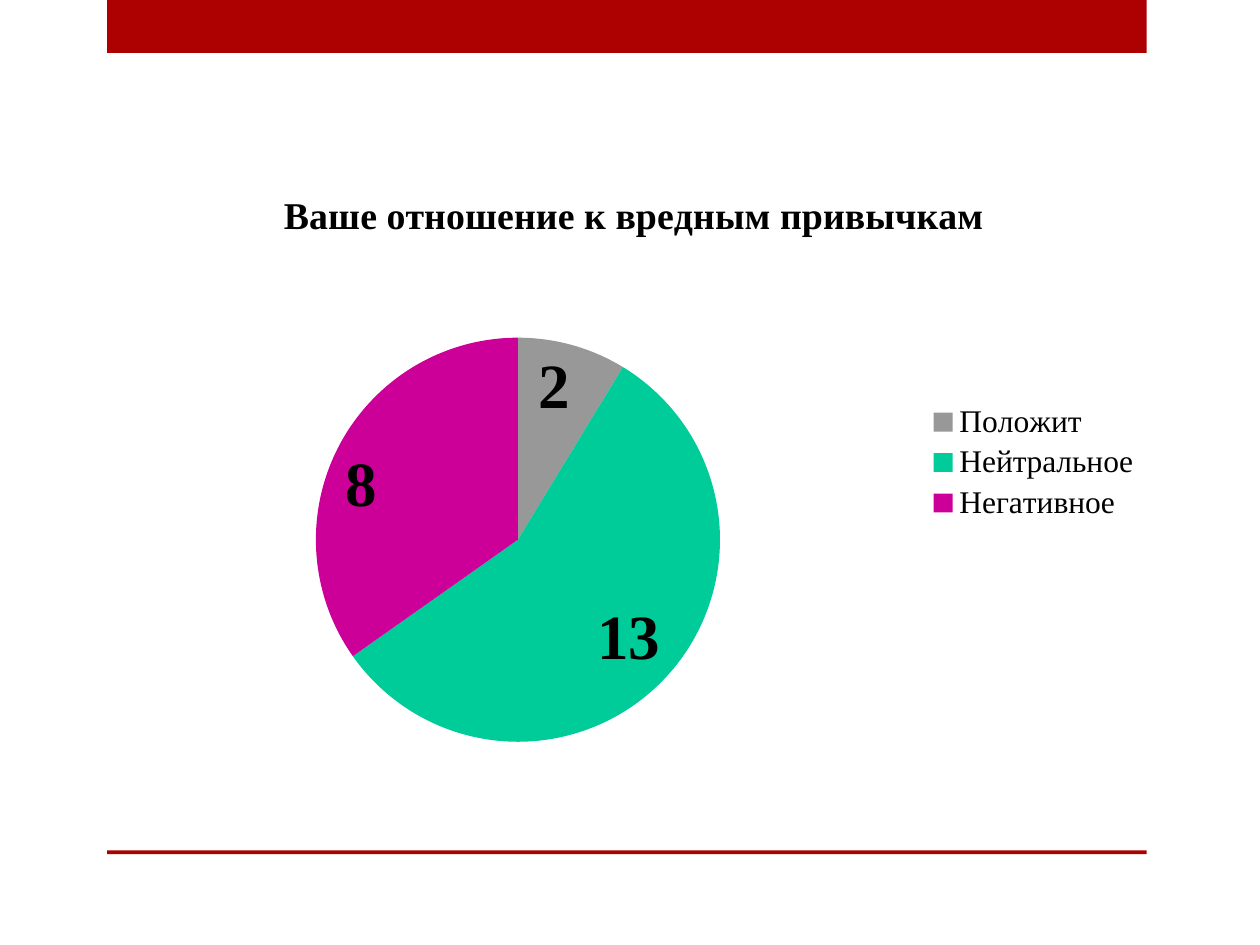
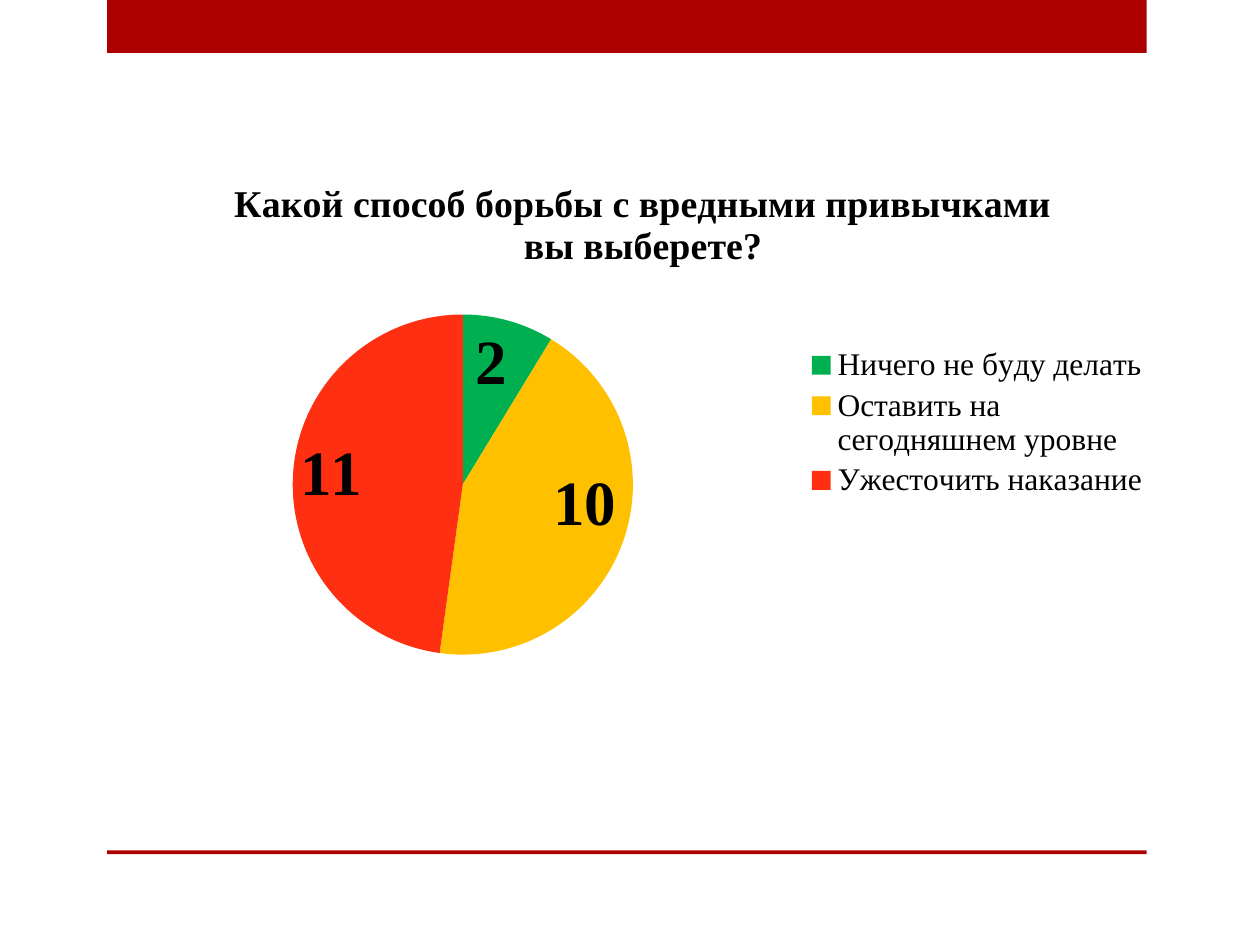
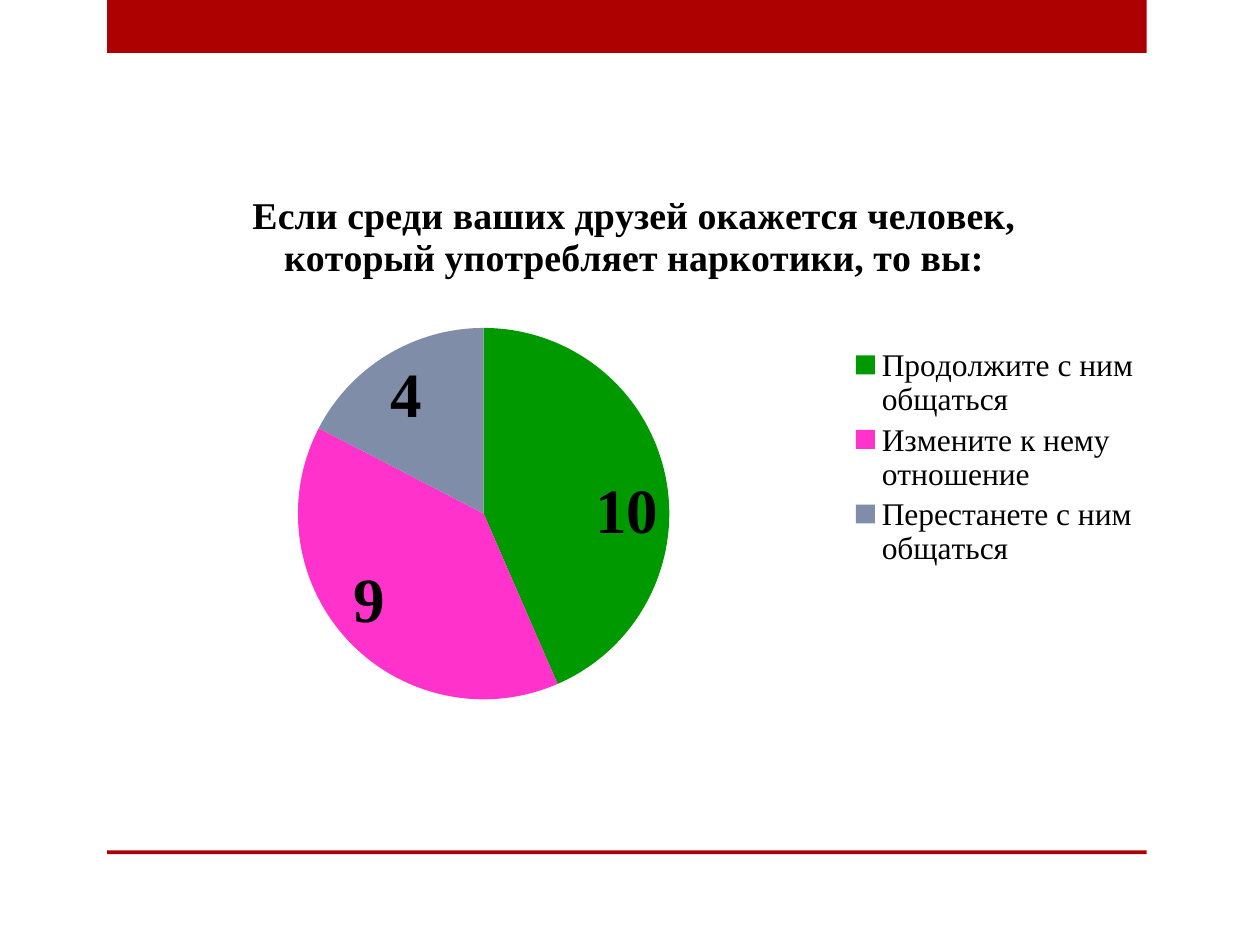
from dataclasses import dataclass

from lxml import etree
from pptx import Presentation
from pptx.chart.data import CategoryChartData
from pptx.dml.color import RGBColor
from pptx.enum.chart import XL_CHART_TYPE, XL_LABEL_POSITION, XL_LEGEND_POSITION
from pptx.enum.shapes import MSO_SHAPE
from pptx.oxml.ns import qn
from pptx.util import Inches, Pt

PIE = XL_CHART_TYPE.PIE
INSIDE_END = XL_LABEL_POSITION.INSIDE_END
LEGEND_RIGHT = XL_LEGEND_POSITION.RIGHT
RECTANGLE = MSO_SHAPE.RECTANGLE

SLIDE_W, SLIDE_H = Inches(10), Inches(7.5)
BLANK_LAYOUT = 6


@dataclass(frozen=True)
class Theme:
    font: str = "Times New Roman"
    band: str = "AD0101"
    text: str = "000000"
    legend_size: float = 18
    title_size: float = 21.6
    value_size: float = 36


THEME = Theme()

# Bands and charts are boxes in shares of the slide: left, top, width, height
BANDS = [(0.085, 0, 0.825, 0.056), (0.085, 0.9, 0.825, 0.004)]


@dataclass(frozen=True)
class Question:
    title: str
    answers: list  # (answer, votes, colour)
    box: tuple
    plot: tuple  # shares of the chart


QUESTIONS = [
    Question(
        "Ваше отношение к вредным привычкам",
        [("Положит", 2, "989898"),
         ("Нейтральное", 13, "00CC99"),
         ("Негативное", 8, "CC0099")],
        box=(0.091, 0.175, 0.825, 0.629),
        plot=(0.05, 0.29, 0.676, 0.68),
    ),
    Question(
        "Какой способ борьбы с вредными привычками вы выберете?",
        [("Ничего не буду делать", 2, "00B050"),
         ("Оставить на сегодняшнем уровне", 10, "FFC000"),
         ("Ужесточить наказание", 11, "FF2F12")],
        box=(0.098, 0.164, 0.825, 0.567),
        plot=(0.056, 0.298, 0.541, 0.635),
    ),
    Question(
        "Если среди ваших друзей окажется человек, "
        "который употребляет наркотики, то вы:",
        [("Продолжите с ним общаться", 10, "009900"),
         ("Измените к нему отношение", 9, "FF33CC"),
         ("Перестанете с ним общаться", 4, "808DA9")],
        box=(0.091, 0.175, 0.825, 0.619),
        plot=(0.064, 0.278, 0.582, 0.635),
    ),
]


def on_slide(box):
    """Turn shares of the slide into lengths."""
    left, top, width, height = box
    return (int(left * SLIDE_W), int(top * SLIDE_H),
            int(width * SLIDE_W), int(height * SLIDE_H))


def style_font(font, size, bold=False):
    font.name = THEME.font
    font.size = Pt(size)
    font.bold = bold
    font.color.rgb = RGBColor.from_string(THEME.text)


def paint(fill, colour):
    fill.solid()
    fill.fore_color.rgb = RGBColor.from_string(colour)


def add_bands(slide):
    """Red band above and thin rule below."""
    for box in BANDS:
        band = slide.shapes.add_shape(RECTANGLE, *on_slide(box))
        paint(band.fill, THEME.band)
        band.line.fill.background()
        band.shadow.inherit = False


def place_plot(chart, plot):
    """Fix the inner plot area at shares of the chart."""
    plot_area = chart.element.find(".//" + qn("c:plotArea"))
    layout = plot_area.find(qn("c:layout"))
    if layout is None:
        layout = etree.Element(qn("c:layout"))
        plot_area.insert(0, layout)
    manual = etree.SubElement(layout, qn("c:manualLayout"))
    settings = [("layoutTarget", "inner"), ("xMode", "edge"), ("yMode", "edge")]
    for tag, value in settings + list(zip("xywh", plot)):
        etree.SubElement(manual, qn(f"c:{tag}")).set("val", str(value))


def add_pie(slide, question):
    votes = CategoryChartData()
    votes.categories = [answer for answer, _, _ in question.answers]
    votes.add_series(question.title, [count for _, count, _ in question.answers])
    chart = slide.shapes.add_chart(PIE, *on_slide(question.box), votes).chart
    style_font(chart.font, THEME.legend_size)

    # Question
    chart.has_title = True
    chart.chart_title.include_in_layout = False
    heading = chart.chart_title.text_frame
    heading.text = question.title
    style_font(heading.paragraphs[0].font, THEME.title_size, bold=True)

    # Answers
    chart.has_legend = True
    chart.legend.position = LEGEND_RIGHT
    chart.legend.include_in_layout = False
    style_font(chart.legend.font, THEME.legend_size)

    # Slices and their values
    pie = chart.plots[0]
    pie.vary_by_categories = True
    for index, (_, _, colour) in enumerate(question.answers):
        paint(pie.series[0].points[index].format.fill, colour)
    pie.has_data_labels = True
    values = pie.data_labels
    values.show_value = True
    values.show_percentage = False
    values.position = INSIDE_END
    style_font(values.font, THEME.value_size, bold=True)
    place_plot(chart, question.plot)


def main():
    survey = Presentation()
    survey.slide_width, survey.slide_height = SLIDE_W, SLIDE_H
    for question in QUESTIONS:
        slide = survey.slides.add_slide(survey.slide_layouts[BLANK_LAYOUT])
        add_bands(slide)
        add_pie(slide, question)
    survey.save("out.pptx")


if __name__ == "__main__":
    main()
